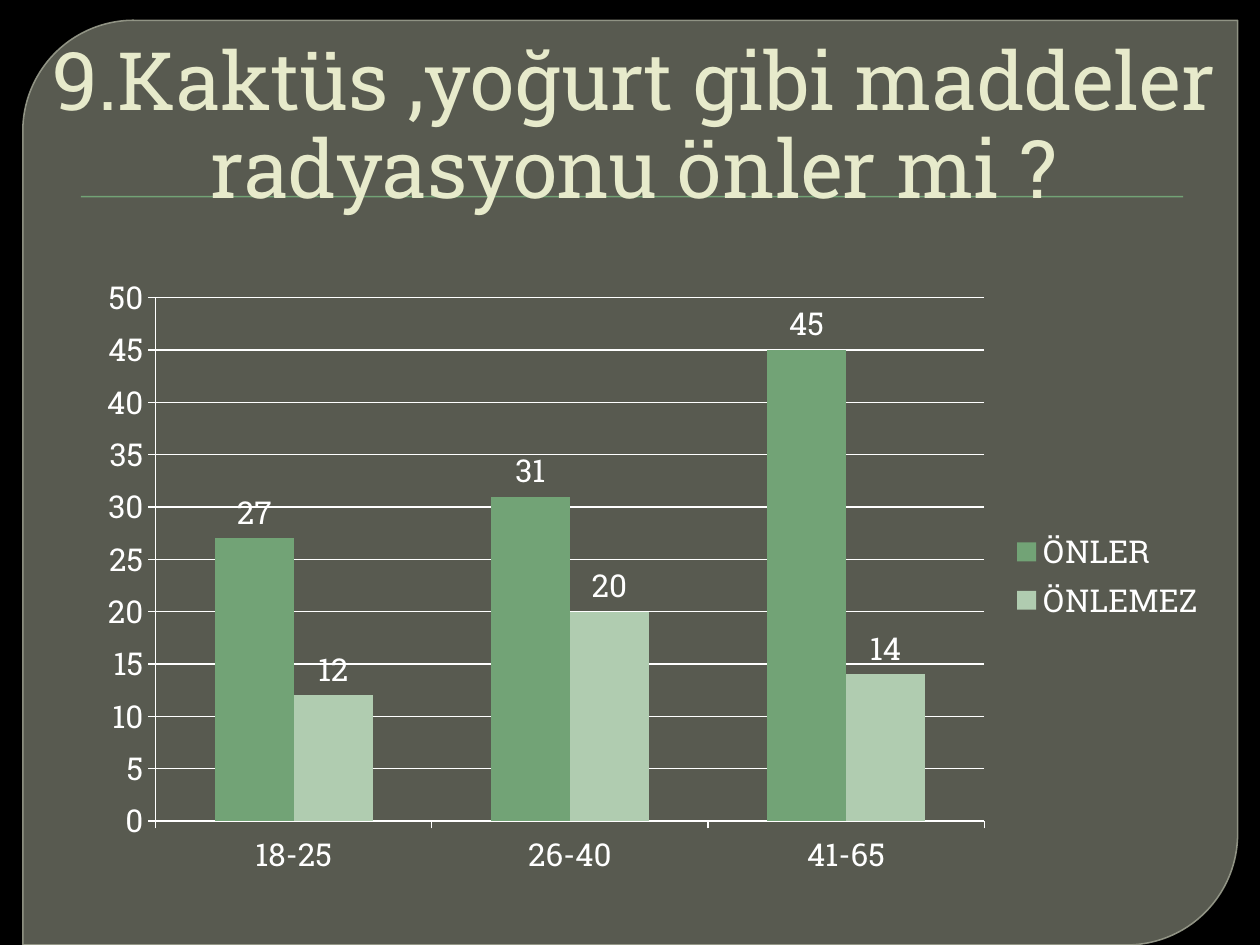
import pptx
import pptx.chart.data
import pptx.dml.color
import pptx.enum.chart
import pptx.enum.shapes
import pptx.enum.text
import pptx.oxml
import pptx.oxml.ns
import pptx.util
from pptx.util import Cm
import lxml.etree

FONT = "Roboto Slab"
WHITE = "FFFFFF"
GREEN = "72A376"
PALE_GREEN = "B0CCB0"


def color(value):
    """Turn a hex string into a colour."""
    return pptx.dml.color.RGBColor.from_string(value)


def set_format(target, values):
    """Set each attribute named in a dict of format values."""
    for name, value in values.items():
        setattr(target, name, value)


def set_font(font, size, value):
    """Give a font the slide's typeface, a size and a colour."""
    set_format(font, {"name": FONT, "size": pptx.util.Pt(size)})
    font.color.rgb = color(value)


def set_opacity(color_format_owner, percent):
    """Make the solid colours below an XML element partly transparent."""
    for element in color_format_owner.iter(pptx.oxml.ns.qn("a:srgbClr")):
        alpha = lxml.etree.SubElement(element, pptx.oxml.ns.qn("a:alpha"))
        alpha.set("val", str(percent * 1000))


def add_panel(slide):
    """Add the translucent panel with two rounded corners."""
    shape = slide.shapes.add_shape(
        pptx.enum.shapes.MSO_SHAPE.ROUND_2_DIAG_RECTANGLE,
        Cm(0.46), Cm(0.41), Cm(24.49), Cm(18.64))
    shape.adjustments[0] = 0.12
    shape.adjustments[1] = 0
    shape.shadow.inherit = False
    shape.fill.solid()
    shape.fill.fore_color.rgb = color("888B7B")
    set_opacity(shape.element, 65)
    shape.line.color.rgb = color("9DA090")
    shape.line.width = pptx.util.Pt(0.87)
    set_opacity(shape.line.fill._xPr, 88)


def add_rule(slide):
    """Add the thin green bar under the title."""
    shape = slide.shapes.add_shape(
        pptx.enum.shapes.MSO_SHAPE.RECTANGLE, Cm(1.63), Cm(3.95), Cm(22.22), Cm(0.03))
    shape.shadow.inherit = False
    shape.fill.solid()
    shape.fill.fore_color.rgb = color(GREEN)
    shape.line.fill.background()


def add_title(slide, text):
    """Add the centred title across the top."""
    frame = slide.shapes.add_textbox(Cm(0), Cm(0), Cm(25.4), Cm(4.37)).text_frame
    set_format(frame, {
        "word_wrap": True,
        "vertical_anchor": pptx.enum.text.MSO_ANCHOR.BOTTOM,
        "margin_left": Cm(0.41),
        "margin_bottom": Cm(0),
    })
    paragraph = frame.paragraphs[0]
    set_format(paragraph, {
        "alignment": pptx.enum.text.PP_ALIGN.CENTER, "line_spacing": 0.92})
    run = paragraph.add_run()
    run.text = text
    set_font(run.font, 46, "E7EACB")


def add_column_chart(slide, categories, series_values):
    """Add the clustered columns, given (name, values, colour) for each series."""
    data = pptx.chart.data.CategoryChartData()
    data.categories = categories
    for name, values, _ in series_values:
        data.add_series(name, values)
    chart = slide.shapes.add_chart(
        pptx.enum.chart.XL_CHART_TYPE.COLUMN_CLUSTERED,
        Cm(1.7), Cm(5.33), Cm(22.86), Cm(12.57), data).chart
    set_font(chart.font, 18, WHITE)
    set_format(chart, {"has_title": False, "has_legend": True})
    set_format(chart.legend, {
        "position": pptx.enum.chart.XL_LEGEND_POSITION.RIGHT,
        "include_in_layout": False,
    })
    set_format(chart.value_axis, {
        "minimum_scale": 0, "maximum_scale": 50, "major_unit": 5,
        "has_major_gridlines": True,
    })
    lines = (chart.value_axis.format.line, chart.category_axis.format.line,
             chart.value_axis.major_gridlines.format.line)
    for line in lines:
        line.color.rgb = color(WHITE)
        line.width = pptx.util.Pt(0.75)
    plot = chart.plots[0]
    set_format(plot, {"gap_width": 150, "overlap": 0, "vary_by_categories": False})
    for series, (_, _, fill) in zip(plot.series, series_values):
        series.format.fill.solid()
        series.format.fill.fore_color.rgb = color(fill)
        set_format(series.data_labels, {
            "show_value": True,
            "position": pptx.enum.chart.XL_LABEL_POSITION.OUTSIDE_END,
        })
        set_font(series.data_labels.font, 18, WHITE)


def main():
    """Build the survey slide and save it."""
    presentation = pptx.Presentation()
    set_format(presentation, {"slide_width": Cm(25.4), "slide_height": Cm(19.05)})
    slide = presentation.slides.add_slide(presentation.slide_layouts[6])
    slide.background.fill.solid()
    slide.background.fill.fore_color.rgb = color("000000")
    add_panel(slide)
    add_rule(slide)
    add_title(slide, "9.Kaktüs ,yoğurt gibi maddeler radyasyonu önler mi ?")
    add_column_chart(slide, ("18-25", "26-40", "41-65"), (
        ("ÖNLER", (27, 31, 45), GREEN),
        ("ÖNLEMEZ", (12, 20, 14), PALE_GREEN),
    ))
    presentation.save("out.pptx")


if __name__ == "__main__":
    main()
